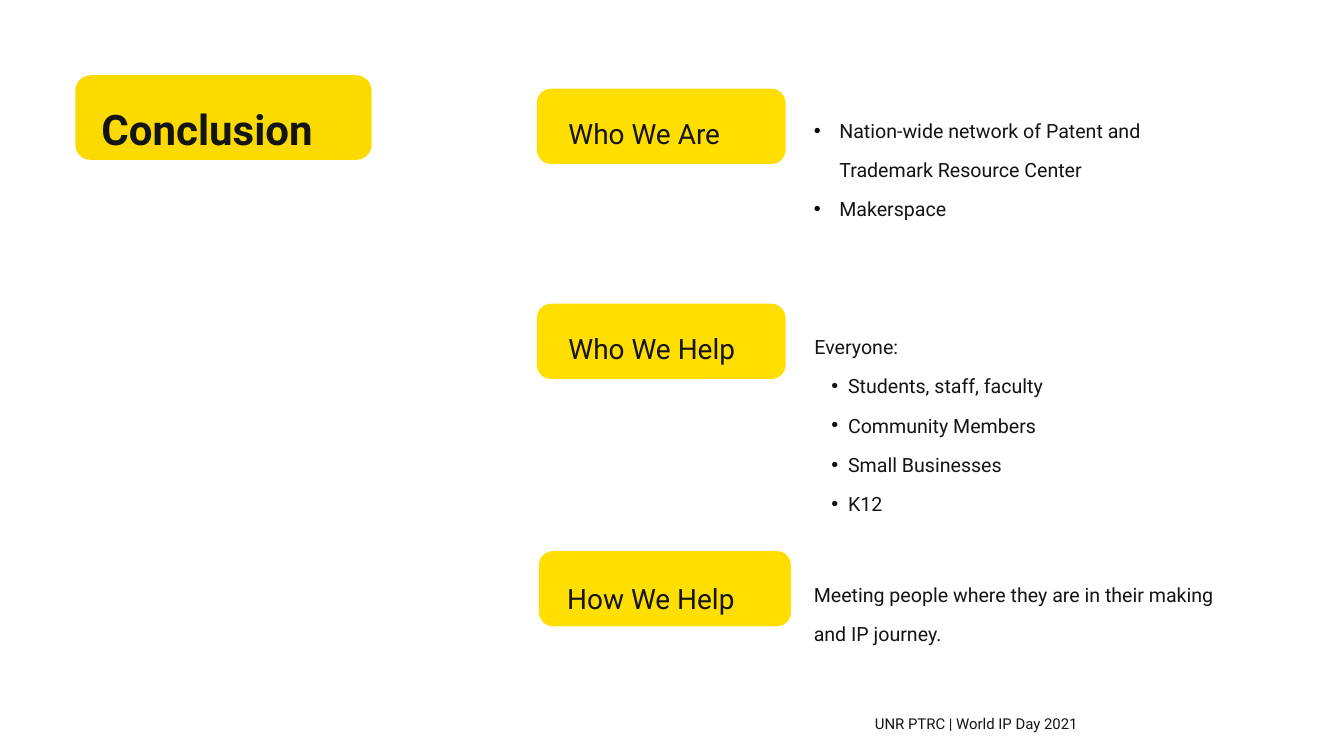
from dataclasses import dataclass

from lxml import etree
from pptx import Presentation
from pptx.dml.color import RGBColor
from pptx.enum.shapes import MSO_SHAPE
from pptx.oxml.ns import qn
from pptx.util import Inches, Pt

ROUNDED = MSO_SHAPE.ROUNDED_RECTANGLE


@dataclass(frozen=True)
class Theme:
    font: str = "Roboto"
    ink: str = "141414"
    bullet: str = "000000"
    title_fill: str = "FBDA00"
    label_fill: str = "FFDE00"
    title: int = 45
    label: int = 30
    body: int = 21
    footer: int = 16


theme = Theme()

prs = Presentation()
prs.slide_width, prs.slide_height = Inches(20), Inches(11.25)
s = prs.slides.add_slide(prs.slide_layouts[6])


def add_badge(x, y, w, h, color, radius):
    sp = s.shapes.add_shape(ROUNDED, Inches(x), Inches(y), Inches(w), Inches(h))
    sp.adjustments[0] = radius / h
    sp.shadow.inherit = False
    sp.fill.solid()
    sp.fill.fore_color.rgb = RGBColor.from_string(color)
    sp.line.fill.background()


def add_text(x, y, w, h, lines, size, spacing, bold=False):
    """Each line is (text, bullet), where bullet is None or (indent, hanging, color)."""
    tf = s.shapes.add_textbox(Inches(x), Inches(y), Inches(w), Inches(h)).text_frame
    tf.word_wrap = True
    tf.margin_left = tf.margin_right = tf.margin_top = tf.margin_bottom = 0
    for i, (text, bullet) in enumerate(lines):
        p = tf.add_paragraph() if i else tf.paragraphs[0]
        if bullet:
            indent, hanging, color = bullet
            pPr = p._p.get_or_add_pPr()
            pPr.set("marL", str(Inches(indent)))
            pPr.set("indent", str(-Inches(hanging)))
            clr = etree.SubElement(pPr, qn("a:buClr"))
            etree.SubElement(clr, qn("a:srgbClr"), val=color)
            etree.SubElement(pPr, qn("a:buFont"), typeface="Arial")
            etree.SubElement(pPr, qn("a:buChar"), char="•")
        p.line_spacing = spacing
        r = p.add_run()
        r.text = text
        r.font.name = theme.font
        r.font.size = Pt(size)
        r.font.bold = bold
        r.font.color.rgb = RGBColor.from_string(theme.ink)


# Title
add_badge(1.12, 1.12, 4.41, 1.26, theme.title_fill, 0.23)
add_text(1.51, 1.32, 3.63, 0.76, [("Conclusion", None)], theme.title, 1.3, bold=True)

# Sections: badge box, label box, body box, body lines
main = (0.38, 0.38, theme.bullet)
sub = (0.5, 0.25, theme.ink)
groups = ["Students, staff, faculty", "Community Members", "Small Businesses", "K12"]
sections = [
    ("Who We Are", (7.99, 1.32, 3.7, 1.12), (8.46, 1.58, 2.87, 1.31),
     (12.11, 1.53, 6.32, 1.77),
     [("Nation-wide network of Patent and Trademark Resource Center", main),
      ("Makerspace", main)]),
    ("Who We Help", (7.99, 4.52, 3.7, 1.12), (8.46, 4.78, 2.87, 1.31),
     (12.12, 4.75, 6.32, 2.95),
     [("Everyone:", None)] + [(group, sub) for group in groups]),
    ("How We Help", (8.02, 8.2, 3.75, 1.12), (8.44, 8.51, 2.9, 0.66),
     (12.11, 8.44, 6.32, 1.18),
     [("Meeting people where they are in their making and IP journey.", None)]),
]
for label, badge_box, label_box, body_box, body in sections:
    add_badge(*badge_box, theme.label_fill, 0.21)
    add_text(*label_box, [(label, None)], theme.label, 1.3)
    add_text(*body_box, body, theme.body, 1.67)

# Footer
add_text(13.02, 10.53, 6.98, 0.38, [("UNR PTRC | World IP Day 2021", None)],
         theme.footer, 1.4)

prs.save("out.pptx")
